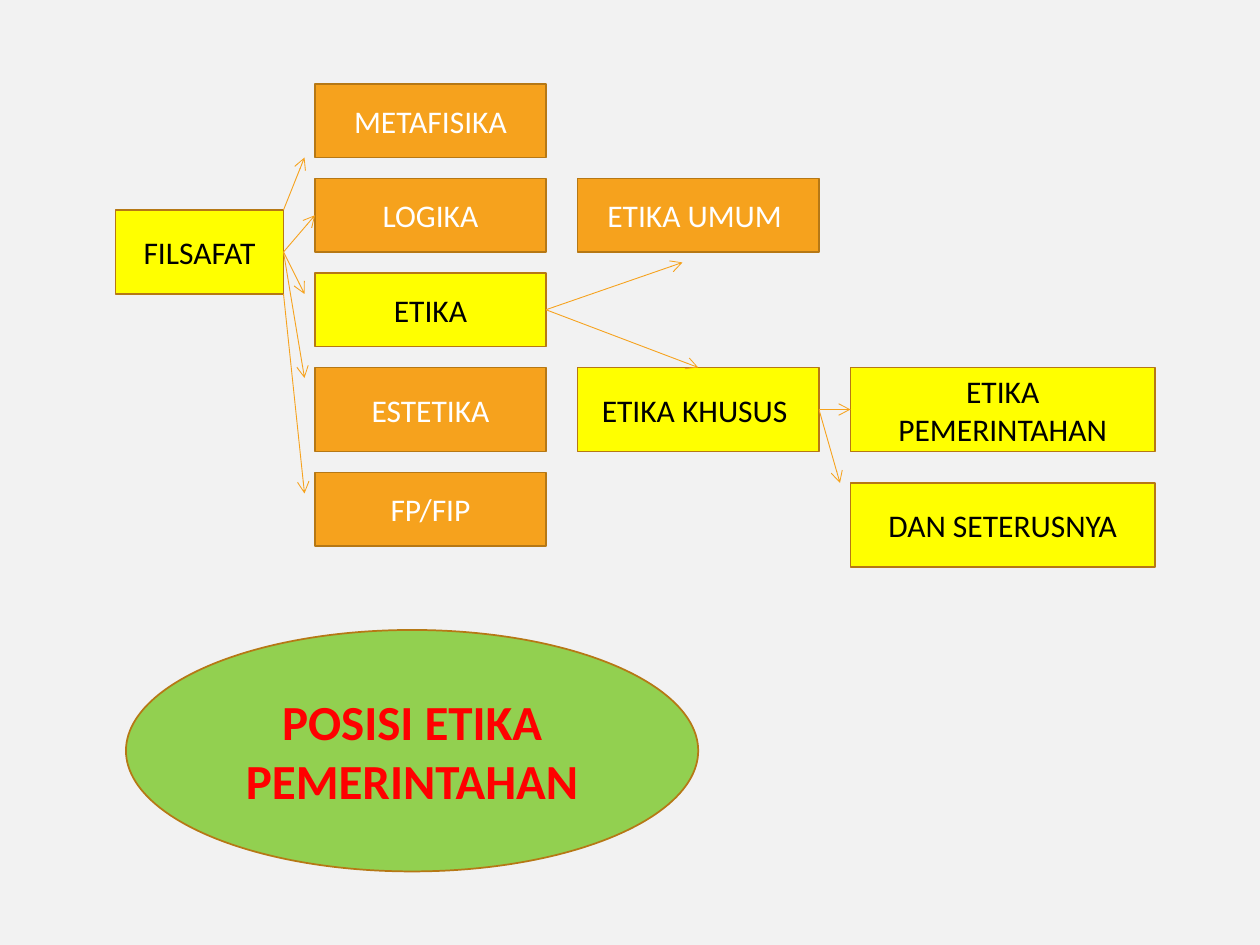
from pptx import Presentation
from pptx.dml.color import RGBColor
from pptx.enum.shapes import MSO_CONNECTOR, MSO_SHAPE as SHAPE
from pptx.enum.text import MSO_ANCHOR, PP_ALIGN
from pptx.oxml.ns import qn
from pptx.util import Pt
from lxml.etree import SubElement

ORANGE, YELLOW, GREEN = "F6A21D", "FFFF00", "92D050"
BLACK, WHITE, RED = "000000", "FFFFFF", "FF0000"
BORDER, BACKGROUND = "B67815", "F2F2F2"
TOP, LEFT, RIGHT = 0, 1, 3


def paint(target, color):
    target.solid()
    target.fore_color.rgb = RGBColor.from_string(color)


def add_node(slide, text, left, top, width, height, fill=ORANGE,
             color=None, outline=SHAPE.RECTANGLE, size=18, bold=False):
    node = slide.shapes.add_shape(outline, Pt(left), Pt(top), Pt(width), Pt(height))
    node.shadow.inherit = False
    paint(node.fill, fill)
    paint(node.line.fill, BORDER)
    node.line.width = Pt(1)
    frame = node.text_frame
    frame.word_wrap = True
    frame.vertical_anchor = MSO_ANCHOR.MIDDLE
    label = frame.paragraphs[0]
    label.text = text
    label.alignment = PP_ALIGN.CENTER
    label.font.name = "Calibri"
    label.font.size = Pt(size)
    label.font.bold = bold
    paint(label.font.fill, color or (BLACK if fill == YELLOW else WHITE))
    return node


def add_arrow(slide, start, end, source=None, target=None):
    arrow = slide.shapes.add_connector(
        MSO_CONNECTOR.STRAIGHT, *(Pt(value) for value in (*start, *end)))
    if source is not None:
        arrow.begin_connect(source, RIGHT)
    if target is not None:
        arrow.end_connect(*target)
    paint(arrow.line.fill, ORANGE)
    arrow.line.width = Pt(0.5)
    SubElement(arrow.line._get_or_add_ln(), qn("a:tailEnd"), type="arrow")
    SubElement(arrow._element.spPr, qn("a:effectLst"))


def add_branches(slide):
    branches = {}
    top, gap = 48, 12
    for text, height, fill in (("METAFISIKA", 42, ORANGE), ("LOGIKA", 42, ORANGE),
                               ("ETIKA", 42, YELLOW), ("ESTETIKA", 48, ORANGE),
                               ("FP/FIP", 42, ORANGE)):
        branches[text] = add_node(slide, text, 180, top, 132, height, fill)
        top += height + gap
    return branches


def main():
    deck = Presentation()
    deck.slide_width, deck.slide_height = Pt(720), Pt(540)
    slide = deck.slides.add_slide(deck.slide_layouts[6])
    paint(slide.background.fill, BACKGROUND)

    philosophy = add_node(slide, "FILSAFAT", 66, 120, 96, 48, YELLOW)
    branches = add_branches(slide)
    logic, ethics = branches["LOGIKA"], branches["ETIKA"]
    add_node(slide, "ETIKA UMUM ", 330, 102, 138, 42)
    special = add_node(slide, "ETIKA KHUSUS ", 330, 210, 138, 48, YELLOW)
    government = add_node(slide, "ETIKA PEMERINTAHAN", 486, 210, 174, 48, YELLOW)
    add_node(slide, "DAN SETERUSNYA", 486, 276, 174, 48, YELLOW)
    add_node(slide, "POSISI ETIKA PEMERINTAHAN", 72, 360, 327, 138, GREEN,
             RED, SHAPE.OVAL, 28, True)

    for start, end, source, target in (
            ((162, 120), (174, 90), None, None),
            ((162, 144), (180, 123), philosophy, (logic, LEFT)),
            ((162, 144), (174, 168), philosophy, None),
            ((162, 144), (174, 216), philosophy, None),
            ((162, 168), (174, 282), None, None),
            ((312, 177), (390, 150), ethics, None),
            ((312, 177), (399, 210), ethics, (special, TOP)),
            ((468, 234), (486, 234), special, (government, LEFT)),
            ((468, 234), (480, 276), special, None)):
        add_arrow(slide, start, end, source, target)

    deck.save("out.pptx")


if __name__ == "__main__":
    main()
